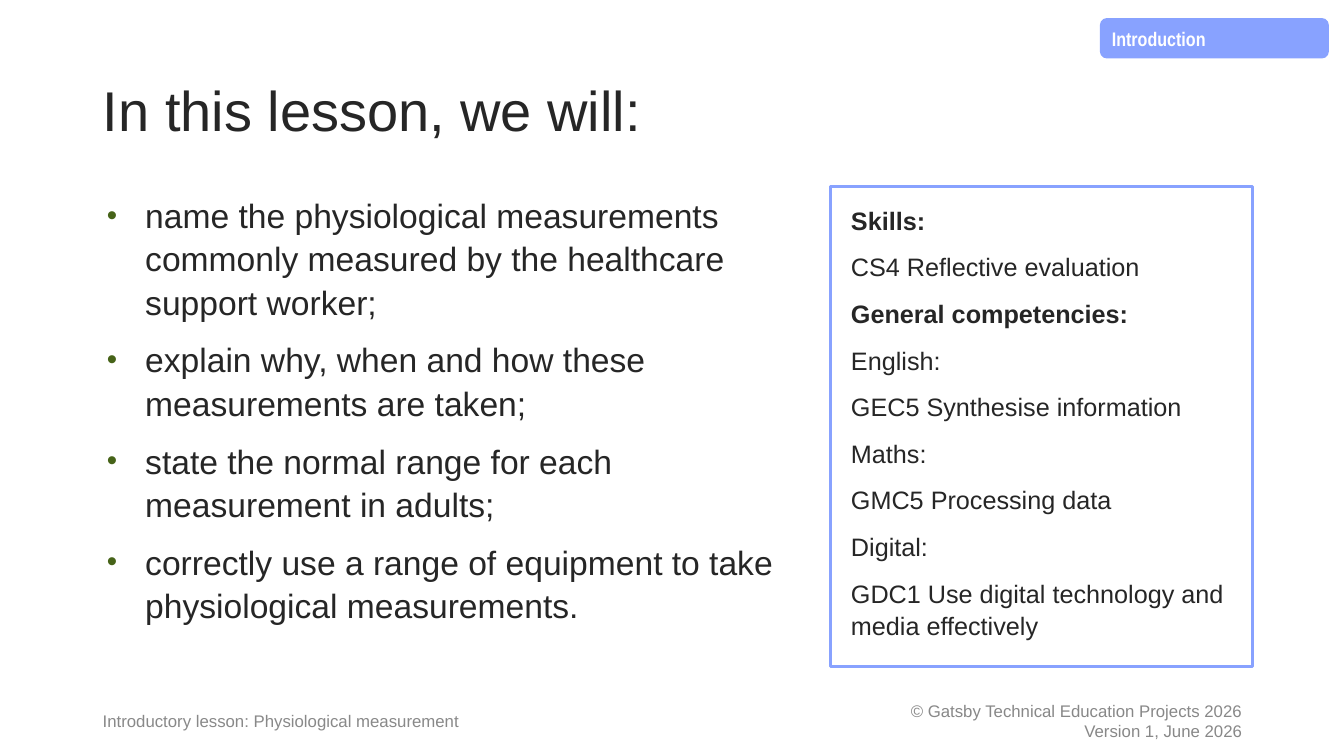
from lxml import etree
from pptx import Presentation
from pptx.dml.color import RGBColor
from pptx.enum.shapes import MSO_SHAPE
from pptx.enum.text import MSO_ANCHOR, MSO_AUTO_SIZE, PP_ALIGN
from pptx.oxml.ns import qn
from pptx.util import Inches, Pt

HEADING = "In this lesson, we will:"
SECTION = "Introduction"
OBJECTIVES = [
    "name the physiological measurements commonly measured by the healthcare support worker;",
    "explain why, when and how these measurements are taken;",
    "state the normal range for each measurement in adults;",
    "correctly use a range of equipment to take physiological measurements.",
]
SKILLS = [
    "Skills:",
    "CS4 Reflective evaluation",
    "General competencies:",
    "English:",
    "GEC5 Synthesise information",
    "Maths:",
    "GMC5 Processing data",
    "Digital:",
    "GDC1 Use digital technology and media effectively",
]
SKILL_HEADINGS = {"Skills:", "General competencies:"}
LESSON = ["Introductory lesson: Physiological measurement"]
COPYRIGHT = ["© Gatsby Technical Education Projects 2026", "Version 1, June 2026"]

INK = RGBColor(0x26, 0x26, 0x26)
PERIWINKLE = RGBColor(0x88, 0xA2, 0xFF)
WHITE = RGBColor(0xFF, 0xFF, 0xFF)
LESSON_GREY = RGBColor(0x89, 0x89, 0x89)
COPYRIGHT_GREY = RGBColor(0x88, 0x88, 0x88)
BULLET_GREEN = RGBColor(0x46, 0x63, 0x18)

LEFT, RIGHT = 0.92, 12.42
CONTENT_TOP, CONTENT_HEIGHT = 1.85, 4.76
FOOTER_TOP, FOOTER_HEIGHT = 6.95, 0.4


def place(shape, left, top, width, height):
    shape.left, shape.top = Inches(left), Inches(top)
    shape.width, shape.height = Inches(width), Inches(height)


def add_bullet(paragraph):
    """Give the paragraph a hanging green bullet."""
    properties = paragraph._p.get_or_add_pPr()
    properties.set("marL", str(Inches(0.5)))
    properties.set("indent", str(-Inches(0.38)))
    colour = etree.SubElement(properties, qn("a:buClr"))
    etree.SubElement(colour, qn("a:srgbClr"), val=str(BULLET_GREEN))
    etree.SubElement(properties, qn("a:buSzPct"), val="88000")
    etree.SubElement(properties, qn("a:buFont"), typeface="Arial")
    etree.SubElement(properties, qn("a:buChar"), char="•")


def write(shape, lines, size, colour, font="Arial", bold_lines=(), spacing=1.08,
          gap=0, align=PP_ALIGN.LEFT, anchor=MSO_ANCHOR.TOP, bulleted=False):
    frame = shape.text_frame
    frame.text = "\n".join(lines)
    frame.word_wrap = True
    frame.auto_size = MSO_AUTO_SIZE.NONE
    frame.vertical_anchor = anchor
    for index, paragraph in enumerate(frame.paragraphs):
        if bulleted:
            add_bullet(paragraph)
        paragraph.alignment = align
        paragraph.line_spacing = spacing
        paragraph.space_before = Pt(gap if index else 0)
        for run in paragraph.runs:
            run.font.name = font
            run.font.size = Pt(size)
            run.font.color.rgb = colour
            run.font.bold = run.text in bold_lines


def add_panel(slide, preset, fill, *box):
    panel = slide.shapes.add_shape(preset, *map(Inches, box))
    panel.shadow.inherit = False
    panel.fill.solid()
    panel.fill.fore_color.rgb = fill
    return panel


def add_footer(slide, lines, left, width, colour, align):
    footer = slide.shapes.add_textbox(
        *map(Inches, (left, FOOTER_TOP, width, FOOTER_HEIGHT)))
    write(footer, lines, 12, colour, spacing=1.0, align=align, anchor=MSO_ANCHOR.MIDDLE)


def main():
    deck = Presentation()
    deck.slide_width, deck.slide_height = Inches(13.33), Inches(7.5)
    slide = deck.slides.add_slide(deck.slide_layouts[1])

    add_footer(slide, LESSON, LEFT, 4.6, LESSON_GREY, PP_ALIGN.LEFT)
    add_footer(slide, COPYRIGHT, RIGHT - 4.5, 4.5, COPYRIGHT_GREY, PP_ALIGN.RIGHT)

    title = slide.shapes.title
    place(title, LEFT, 0.4, RIGHT - LEFT, 1.45)
    write(title, [HEADING], 40, INK, spacing=0.9, anchor=MSO_ANCHOR.MIDDLE)

    section_tag = add_panel(slide, MSO_SHAPE.FLOWCHART_ALTERNATE_PROCESS, PERIWINKLE,
                            10.91, 0.18, 2.27, 0.4)
    section_tag.line.fill.background()
    write(section_tag, [SECTION], 14, WHITE, font="Arial Narrow", bold_lines={SECTION})

    objectives = slide.placeholders[1]
    place(objectives, 0.84, CONTENT_TOP, 7, CONTENT_HEIGHT)
    write(objectives, OBJECTIVES, 24, INK, gap=10, bulleted=True)

    skills = add_panel(slide, MSO_SHAPE.RECTANGLE, WHITE,
                       RIGHT - 4.18, CONTENT_TOP, 4.18, CONTENT_HEIGHT)
    skills.line.color.rgb = PERIWINKLE
    skills.line.width = Pt(2.25)
    frame = skills.text_frame
    frame.margin_left = frame.margin_right = Inches(0.2)
    frame.margin_top = frame.margin_bottom = Inches(0.16)
    write(skills, SKILLS, 18, INK, bold_lines=SKILL_HEADINGS, gap=10)

    deck.save("out.pptx")


if __name__ == "__main__":
    main()
